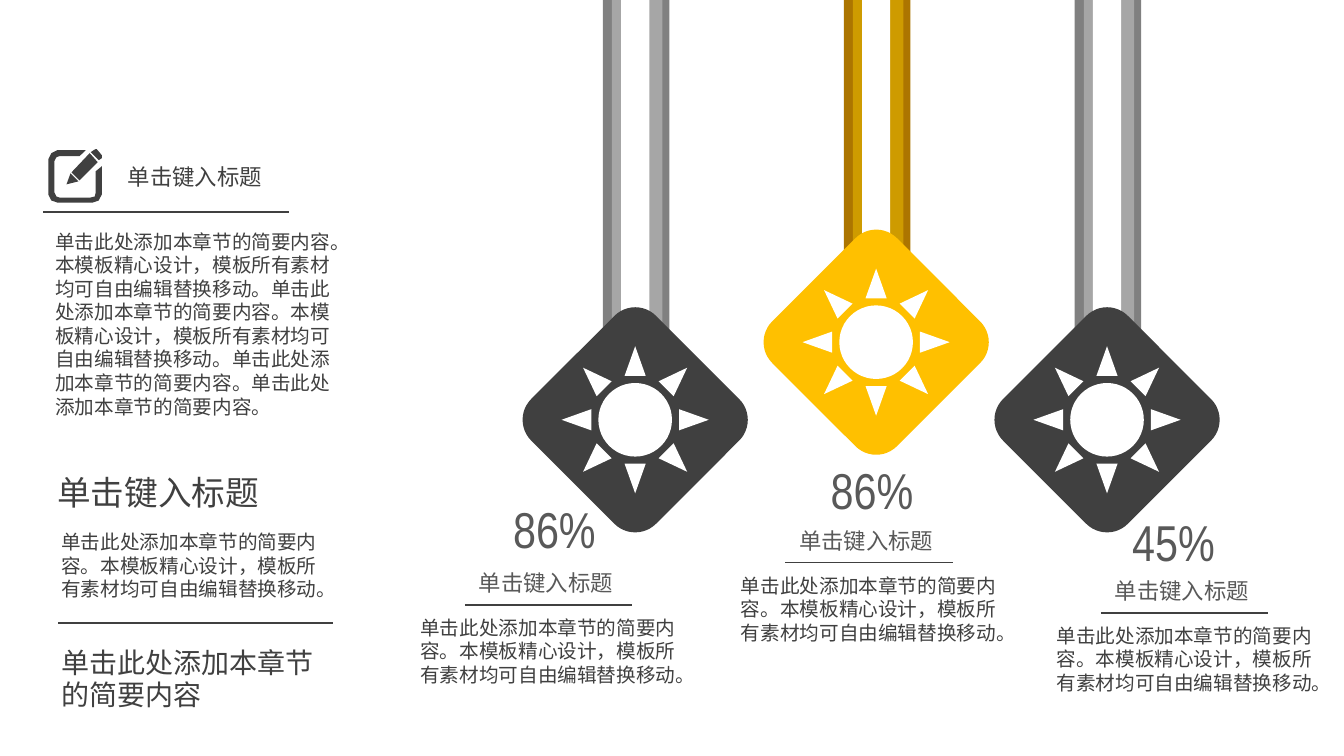
from lxml.etree import SubElement
from pptx import Presentation
from pptx.dml.color import RGBColor
from pptx.enum.shapes import MSO_CONNECTOR, MSO_SHAPE
from pptx.oxml.ns import qn
from pptx.util import Inches, Pt

DARK, GREY = "404040", "595959"
CJK = "Noto Sans CJK SC"
TITLE = "单击键入标题"
SHORT = "单击此处添加本章节的简要内容。"
REUSE = "本模板精心设计，模板所有素材均可自由编辑替换移动。"


def paint(sp, color):
    """Give a shape a plain fill without line or shadow."""
    sp.shadow.inherit = False
    sp.fill.solid()
    sp.fill.fore_color.rgb = RGBColor.from_string(color)
    sp.line.fill.background()


def add_text(text, x, y, w, h, size=14, color=DARK, font=CJK, spacing=1.2):
    tf = s.shapes.add_textbox(Inches(x), Inches(y), Inches(w), Inches(h)).text_frame
    tf.word_wrap = True
    p = tf.paragraphs[0]
    if spacing:
        p.line_spacing = Pt(size * spacing)
    r = p.add_run()
    r.text = text
    r.font.size = Pt(size)
    r.font.name = font
    r.font.color.rgb = RGBColor.from_string(color)
    SubElement(r.font._element, qn("a:ea")).set("typeface", font)


prs = Presentation()
prs.slide_width, prs.slide_height = Inches(13.33), Inches(7.5)
s = prs.slides.add_slide(prs.slide_layouts[6])

# Pendants: centre, diamond top, strap edge, strap, diamond colour
DIAMOND, SUN, STRAP_TOP = 1.75, 1.46, -0.03
pendants = [
    (6.3, 3.29, "808080", "A6A6A6", DARK),
    (8.69, 2.52, "AC7500", "CE9B00", "FFC000"),
    (10.98, 3.29, "808080", "A6A6A6", DARK),
]
for cx, top, edge, strap, color in pendants:
    for dx, width, shade in [(-0.32, 0.66, edge), (-0.23, 0.5, strap), (-0.14, 0.28, "FFFFFF")]:
        sp = s.shapes.add_shape(MSO_SHAPE.RECTANGLE, Inches(cx + dx), Inches(STRAP_TOP),
                                Inches(width), Inches(top + 0.07))
        paint(sp, shade)
    for kind, size, angle, shade in [(MSO_SHAPE.ROUNDED_RECTANGLE, DIAMOND, 45, color),
                                     (MSO_SHAPE.SUN, SUN, 0, "FFFFFF")]:
        sp = s.shapes.add_shape(kind, Inches(cx - size / 2), Inches(top + (DIAMOND - size) / 2),
                                Inches(size), Inches(size))
        sp.rotation = angle
        paint(sp, shade)

# Captions are placed around their rule
rules = [(0.43, 2.1, 2.44), (0.58, 6.18, 2.72)]
captions = [("86%", 4.99, 4.89, 4.61, 6), ("86%", 8.14, 4.51, 7.79, 5.58),
            ("45%", 11.13, 5.02, 10.92, 6.08)]
for percent, x, y, rule_x, rule_y in captions:
    add_text(percent, x, y, 1.6, 0.7, size=36, color=GREY, font="Arial Narrow", spacing=None)
    add_text(TITLE, rule_x + 0.04, rule_y - 0.4, 1.8, 0.39, size=16, color=GREY)
    add_text(SHORT + REUSE, rule_x - 0.54, rule_y + 0.06, 2.8, 0.8)
    rules.append((rule_x, rule_y, 1.66))

for x, y, length in rules:
    line = s.shapes.add_connector(MSO_CONNECTOR.STRAIGHT, Inches(x), Inches(y),
                                  Inches(x + length), Inches(y))
    line.line.color.rgb = RGBColor.from_string(DARK)
    line.line.width = Pt(1.25)
    SubElement(line._element.spPr, qn("a:effectLst"))

# Edit icon in hundredths of an inch: pencil end, shaft, tip and the open frame
icon = [
    [(98, 159), (90, 151), (93, 149), (95, 148), (96, 148), (101, 154), (101, 157)],
    [(79, 179), (71, 171), (89, 152), (97, 161)],
    [(78, 180), (66, 183), (70, 172)],
    [(59, 155), (56, 156), (54, 160), (54, 191), (56, 195), (59, 196),
     (90, 196), (94, 195), (95, 191), (95, 170), (101, 165), (101, 193),
     (98, 199), (92, 201), (57, 201), (51, 199), (48, 193), (48, 158),
     (51, 152), (57, 149), (85, 149), (79, 155)],
]
fb = s.shapes.build_freeform(*icon[0][0], scale=Inches(0.01))
for outline in icon:
    fb.move_to(*outline[0])
    fb.add_line_segments(outline[1:], close=True)
paint(fb.convert_to_shape(), DARK)

# Left column
add_text(TITLE, 1.17, 1.57, 2.18, 0.39, size=16)
add_text((SHORT + REUSE) * 2 + SHORT * 2, 0.45, 2.23, 3.02, 2)
add_text(TITLE, 0.47, 4.63, 2.8, 0.5, size=24)
add_text(SHORT + REUSE, 0.51, 5.21, 2.8, 0.8)
add_text(SHORT[:-1], 0.51, 6.37, 2.84, 0.79, size=20, spacing=1.15)

prs.save("out.pptx")
